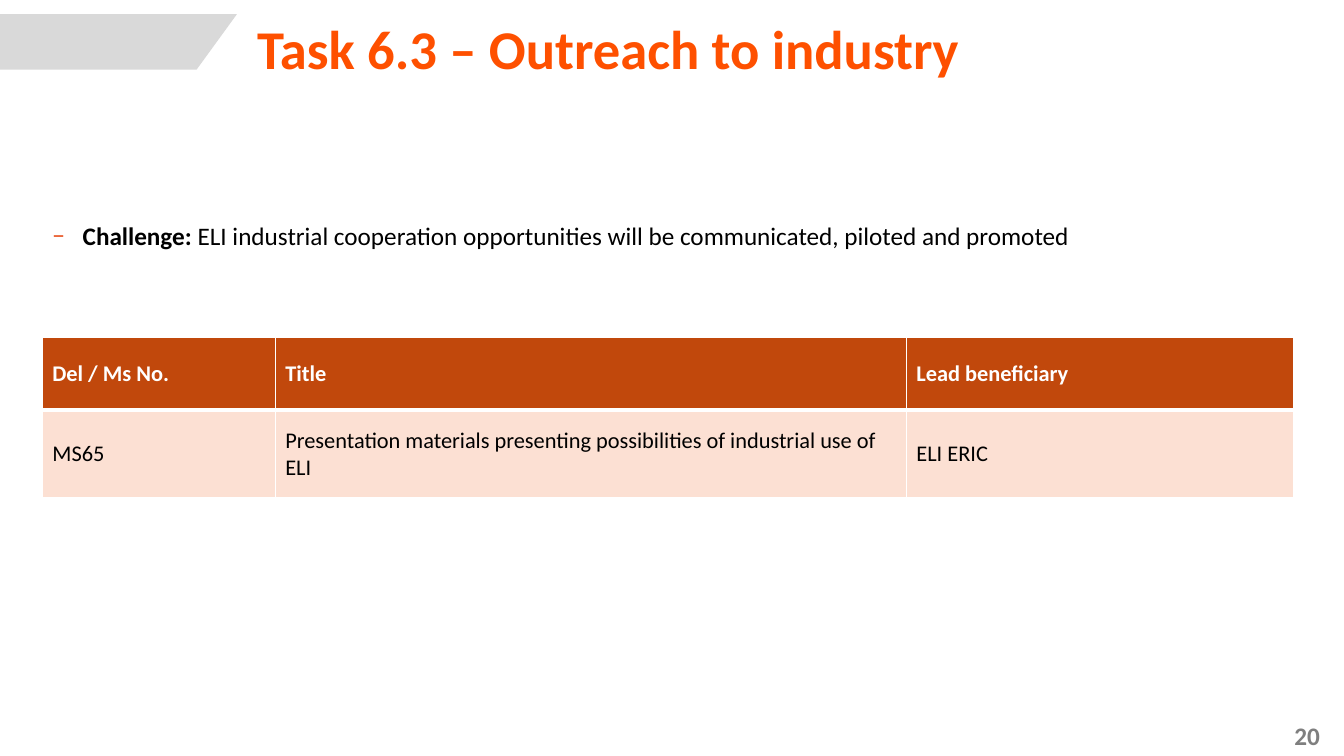
from lxml import etree
from pptx import Presentation
from pptx.dml.color import RGBColor
from pptx.enum.text import MSO_ANCHOR, MSO_AUTO_SIZE, PP_ALIGN
from pptx.oxml.ns import qn
from pptx.util import Pt

TOP, MIDDLE = MSO_ANCHOR.TOP, MSO_ANCHOR.MIDDLE
LEFT, RIGHT = PP_ALIGN.LEFT, PP_ALIGN.RIGHT
NO_FIT = MSO_AUTO_SIZE.NONE

SCALE = 9144  # EMU per px, 100 px to the inch
FONT = "Calibri"
COLORS = {
    "title": "FE5000",
    "dash": "E84E1B",
    "head": "C1480C",
    "row": "FCE0D3",
    "flag": "D9D9D9",
    "page": "7F7F7F",
    "text": "000000",
    "white": "FFFFFF",
}
ROWS = [
    ["Del / Ms No.", "Title", "Lead beneficiary"],
    ["MS65",
     "Presentation materials presenting possibilities of industrial use of ELI",
     "ELI ERIC"],
]
COL_WIDTHS = [231, 626, 384]
ROW_HEIGHTS = [72, 87]


def px(count):
    return count * SCALE


def rgb(name):
    return RGBColor.from_string(COLORS[name])


def place(shape, left, top, width, height):
    shape.left, shape.top = px(left), px(top)
    shape.width, shape.height = px(width), px(height)


def write(para, text, size=18, color="text", bold=False, align=LEFT, lines=1.0):
    para.alignment = align
    para.line_spacing = lines
    para.space_before = Pt(0)
    run = para.add_run()
    run.text = text
    font = run.font
    font.name, font.size, font.bold = FONT, Pt(size), bold
    font.color.rgb = rgb(color)


def set_frame(shape, upper=5):
    frame = shape.text_frame
    frame.word_wrap = True
    frame.auto_size = NO_FIT
    frame.vertical_anchor = TOP
    frame.margin_left = frame.margin_right = px(10)
    frame.margin_top, frame.margin_bottom = px(upper), px(5)
    return frame.paragraphs[0]


def add_dash(para, indent):
    props = para._p.get_or_add_pPr()
    props.set("marL", str(px(indent)))
    props.set("indent", str(-px(indent)))
    tint = etree.SubElement(props, qn("a:buClr"))
    etree.SubElement(tint, qn("a:srgbClr"), val=COLORS["dash"])
    etree.SubElement(props, qn("a:buFont"), typeface=FONT)
    etree.SubElement(props, qn("a:buChar"), char="−")


def add_flag(slide):
    form = slide.shapes.build_freeform(0, 14, scale=SCALE)
    form.add_line_segments([(235, 14), (195, 69), (0, 69)], close=True)
    flag = form.convert_to_shape()
    flag.shadow.inherit = False
    flag.fill.solid()
    flag.fill.fore_color.rgb = rgb("flag")
    flag.line.fill.background()


def add_page(slide, number):
    box = slide.shapes.add_textbox(px(1200), px(710), px(119), px(40))
    write(set_frame(box), number, color="page", bold=True, align=RIGHT)


def set_borders(cell, widths):
    props = cell._tc.get_or_add_tcPr()
    for side, width in zip("LRTB", widths):
        line = etree.SubElement(props, qn(f"a:ln{side}"), w=str(Pt(width)))
        fill = etree.SubElement(line, qn("a:solidFill"))
        etree.SubElement(fill, qn("a:srgbClr"), val=COLORS["white"])


def fill_cell(cell, text, head):
    set_borders(cell, (1, 1, 1, 3) if head else (1, 1, 3, 1))
    cell.fill.solid()
    cell.fill.fore_color.rgb = rgb("head" if head else "row")
    cell.vertical_anchor = MIDDLE
    write(cell.text_frame.paragraphs[0], text, size=16, bold=head,
          color="white" if head else "text")


def add_grid(slide):
    frame = slide.shapes.add_table(
        len(ROWS), len(COL_WIDTHS), px(42), px(335),
        px(sum(COL_WIDTHS)), px(sum(ROW_HEIGHTS)))
    table = frame.table
    for col, width in zip(table.columns, COL_WIDTHS):
        col.width = px(width)
    for row, height in zip(table.rows, ROW_HEIGHTS):
        row.height = px(height)
    for r, texts in enumerate(ROWS):
        for c, text in enumerate(texts):
            fill_cell(table.cell(r, c), text, head=r == 0)


def main():
    deck = Presentation()
    deck.slide_width, deck.slide_height = px(1333), px(750)
    slide = deck.slides.add_slide(deck.slide_layouts[1])

    # Page frame
    add_flag(slide)
    add_page(slide, "20")

    # Milestone table
    add_grid(slide)

    # Title
    title = slide.shapes.title
    place(title, 245, 15, 992, 56)
    write(set_frame(title, upper=7), "Task 6.3 – Outreach to industry",
          size=39, color="title", bold=True, lines=0.9)

    # Challenge
    body = slide.placeholders[1]
    place(body, 42, 199, 1146, 51)
    para = set_frame(body)
    add_dash(para, 30)
    write(para, "Challenge: ", bold=True, lines=1.5)
    write(para, "ELI industrial cooperation opportunities will be "
          "communicated, piloted and promoted", lines=1.5)

    deck.save("out.pptx")


if __name__ == "__main__":
    main()
